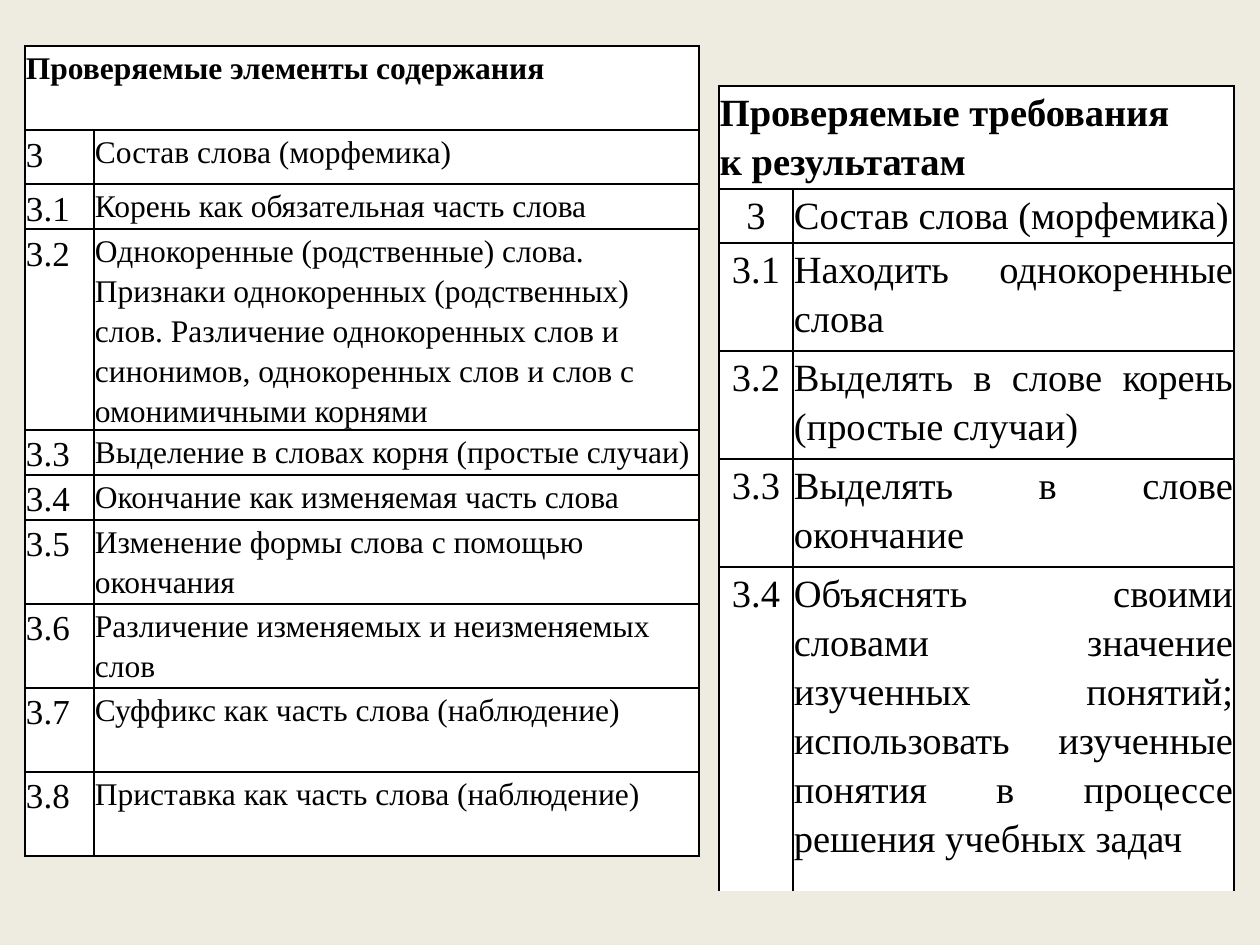
from lxml import etree
from pptx import Presentation, util as u
from pptx.dml.color import RGBColor
from pptx.enum import text
from pptx.oxml.ns import qn

PX = 914400 / 126  # EMU in one px
FONT = "Times New Roman"
BLACK, WHITE, BACKGROUND = "000000", "FFFFFF", "EEECE1"
LEFT, CENTER, JUSTIFY = (text.PP_ALIGN.LEFT, text.PP_ALIGN.CENTER,
                         text.PP_ALIGN.JUSTIFY)
ALL_SIDES = ("L", "R", "T", "B")

CONTENT_TITLE = ["Проверяемые элементы содержания"]
CONTENT_ROWS = [
    ("3", "Состав слова (морфемика)"),
    ("3.1", "Корень как обязательная часть слова"),
    ("3.2", "Однокоренные (родственные) слова. Признаки однокоренных "
            "(родственных) слов. Различение однокоренных слов и синонимов, "
            "однокоренных слов и слов с омонимичными корнями"),
    ("3.3", "Выделение в словах корня (простые случаи)"),
    ("3.4", "Окончание как изменяемая часть слова"),
    ("3.5", "Изменение формы слова с помощью окончания"),
    ("3.6", "Различение изменяемых и неизменяемых слов"),
    ("3.7", "Суффикс как часть слова (наблюдение)"),
    ("3.8", "Приставка как часть слова (наблюдение)"),
]
RESULTS_TITLE = ["Проверяемые требования", "к результатам"]
RESULTS_ROWS = [
    ("3", "Состав слова (морфемика)"),
    ("3.1", "Находить однокоренные слова"),
    ("3.2", "Выделять в слове корень (простые случаи)"),
    ("3.3", "Выделять в слове окончание"),
    ("3.4", "Объяснять своими словами значение изученных понятий; "
            "использовать изученные понятия в процессе решения учебных задач"),
]


def px(length):
    return u.Emu(round(length * PX))


def paint(fill, color):
    fill.solid()
    fill.fore_color.rgb = RGBColor.from_string(color)


def set_borders(cell, sides):
    """Draw 1 pt lines on the given sides and none on the others."""
    properties = cell._tc.get_or_add_tcPr()
    for index, side in enumerate(ALL_SIDES):
        line = etree.Element(qn(f"a:ln{side}"), w=str(u.Pt(1)))
        if side in sides:
            solid = etree.SubElement(line, qn("a:solidFill"))
            etree.SubElement(solid, qn("a:srgbClr"), val=BLACK)
        else:
            etree.SubElement(line, qn("a:noFill"))
        properties.insert(index, line)  # lines stand before the fill


def write_cell(cell, lines, size, align=LEFT, bold=False, spacing=1.15,
               after=0, top=0):
    cell.margin_left = cell.margin_right = px(1)
    cell.margin_top, cell.margin_bottom = px(top), 0
    frame = cell.text_frame
    for index, line in enumerate(lines):
        paragraph = frame.add_paragraph() if index else frame.paragraphs[0]
        paragraph.alignment = align
        paragraph.line_spacing = spacing
        paragraph.space_after = u.Pt(after)
        run = paragraph.add_run()
        run.text = line
        run.font.name = FONT
        run.font.size = u.Pt(size)
        run.font.bold = bold
        run.font.color.rgb = RGBColor.from_string(BLACK)


def add_grid(slide, left, top, widths, heights):
    """Add a white bordered table whose first row is one merged cell."""
    table = slide.shapes.add_table(
        len(heights), len(widths), px(left), px(top),
        px(sum(widths)), px(sum(heights))).table
    table.first_row = table.horz_banding = False
    for column, width in zip(table.columns, widths):
        column.width = px(width)
    for row, height in zip(table.rows, heights):
        row.height = px(height)
    for cell in table.iter_cells():
        paint(cell.fill, WHITE)
    table.cell(0, 0).merge(table.cell(0, len(widths) - 1))
    return table


def add_topics(slide, box, heights, title, rows, number_style, topic_style,
               open_bottom=False):
    left, top, widths = box
    table = add_grid(slide, left, top, widths, heights)
    write_cell(table.cell(0, 0), title, bold=True, **topic_style)
    for index, (number, topic) in enumerate(rows, start=1):
        write_cell(table.cell(index, 0), [number], **number_style)
        write_cell(table.cell(index, 1), [topic], **topic_style)
    for index in range(len(heights)):
        is_open = open_bottom and index == len(heights) - 1
        for column in range(len(widths)):
            set_borders(table.cell(index, column),
                        ALL_SIDES[:3] if is_open else ALL_SIDES)


def main():
    presentation = Presentation()
    presentation.slide_width, presentation.slide_height = px(1260), px(945)
    slide = presentation.slides.add_slide(presentation.slide_layouts[6])
    paint(slide.background.fill, BACKGROUND)

    # Left: content elements
    add_topics(slide, (25, 46, (69, 605)),
               [84, 54, 45, 201, 45, 45] + [84] * 4,
               CONTENT_TITLE, CONTENT_ROWS,
               number_style={"size": 20, "after": 10},
               topic_style={"size": 18, "after": 10})

    # Right: required results, numbers set one 14 pt line lower
    add_topics(slide, (719, 86, (74, 441)),
               [103, 54, 108, 108, 108, 324],
               RESULTS_TITLE, RESULTS_ROWS,
               number_style={"size": 22, "align": CENTER,
                             "spacing": u.Pt(14), "top": 24},
               topic_style={"size": 22, "align": JUSTIFY},
               open_bottom=True)

    presentation.save("out.pptx")


if __name__ == "__main__":
    main()
